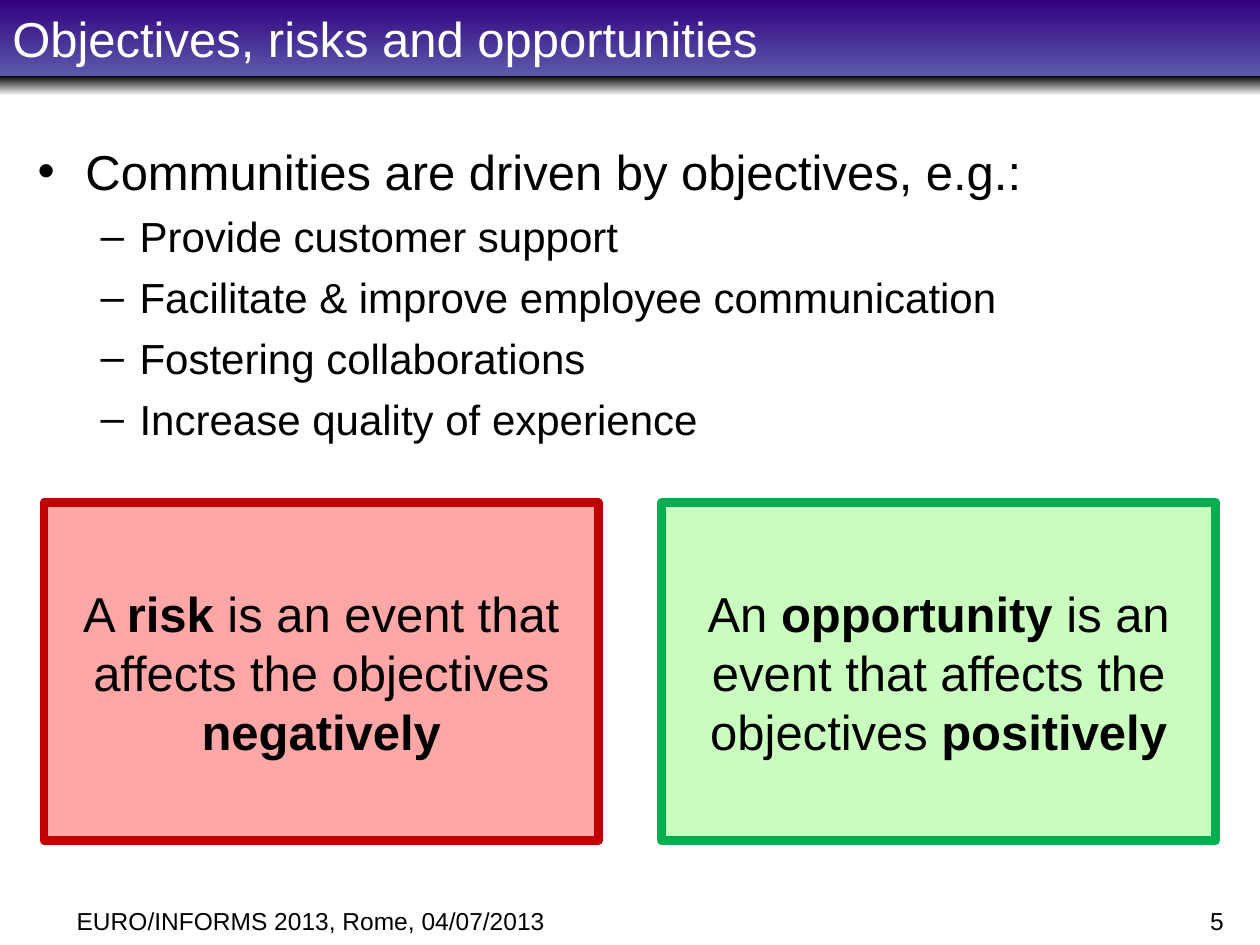
from lxml import etree
from pptx import Presentation
from pptx import util as u
from pptx.dml.color import RGBColor
from pptx.enum import shapes, text
from pptx.oxml.ns import qn

COLUMNS, ROWS = 100, 75
ALIGN, ANCHOR = text.PP_ALIGN, text.MSO_ANCHOR


def colour(value):
    return RGBColor.from_string(value)


class Deck:
    """Holds the style and the current slide; places are in grid columns and rows."""
    font, ink = "Arial", "000000"

    def __init__(self, width, height):
        self.show = Presentation()
        self.show.slide_width, self.show.slide_height = u.Inches(width), u.Inches(height)
        self.slide = self.show.slides.add_slide(self.show.slide_layouts[6])

    def place(self, left, top, width, height):
        column = self.show.slide_width / COLUMNS
        row = self.show.slide_height / ROWS
        return [round(n) for n in (left * column, top * row, width * column, height * row)]

    def rectangle(self, *place):
        box = self.slide.shapes.add_shape(shapes.MSO_SHAPE.RECTANGLE, *self.place(*place))
        box.shadow.inherit = False
        return box

    def add_runs(self, paragraph, runs, size, ink=None):
        """Fill a paragraph with (wording, bold) runs."""
        for wording, bold in runs:
            run = paragraph.add_run()
            run.text = wording
            run.font.name, run.font.size, run.font.bold = self.font, u.Pt(size), bold
            run.font.color.rgb = colour(ink or self.ink)

    def band(self, place, start, end):
        band = self.rectangle(*place)
        band.line.fill.background()
        band.fill.gradient()
        band.fill.gradient_angle = 270
        for stop, shade in zip(band.fill.gradient_stops, (start, end)):
            stop.color.rgb = colour(shade)

    def label(self, place, wording, size, ink=None, align=ALIGN.LEFT, anchor=ANCHOR.TOP):
        frame = self.slide.shapes.add_textbox(*self.place(*place)).text_frame
        frame.word_wrap, frame.vertical_anchor = True, anchor
        frame.paragraphs[0].alignment = align
        self.add_runs(frame.paragraphs[0], [(wording, False)], size, ink)

    def card(self, place, fill, edge, runs):
        card = self.rectangle(*place)
        card.fill.solid()
        card.fill.fore_color.rgb = colour(fill)
        card.line.color.rgb, card.line.width = colour(edge), u.Pt(5)
        frame = card.text_frame
        frame.word_wrap, frame.vertical_anchor = True, ANCHOR.MIDDLE
        frame.paragraphs[0].alignment = ALIGN.CENTER
        self.add_runs(frame.paragraphs[0], runs, 28)

    def outline(self, place, items):
        """Bulleted list of (level, wording) items."""
        levels = [("•", 0.38, 0.38, 28), ("–", 0.81, 0.31, 24)]
        frame = self.slide.shapes.add_textbox(*self.place(*place)).text_frame
        frame.word_wrap, frame.margin_top = True, u.Inches(0.08)
        for index, (level, wording) in enumerate(items):
            mark, indent, hanging, size = levels[level]
            item = frame.add_paragraph() if index else frame.paragraphs[0]
            item.level = level
            props = item._p.get_or_add_pPr()
            props.set("marL", str(u.Inches(indent)))
            props.set("indent", str(-u.Inches(hanging)))
            etree.SubElement(props, qn("a:buFont")).set("typeface", self.font)
            etree.SubElement(props, qn("a:buChar")).set("char", mark)
            if index:
                item.space_before = u.Pt(6)
            self.add_runs(item, [(wording, False)], size)


def main():
    deck = Deck(10, 7.5)

    # Header with its fading shadow
    deck.band((0, 0, 100, 6), "320080", "5A5AAA")
    deck.band((0, 6, 100, 1.6), "000000", "FFFFFF")
    deck.label((0, 0, 80.7, 6), "Objectives, risks and opportunities", 28, "FFFFFF",
               anchor=ANCHOR.MIDDLE)

    # Objectives
    deck.outline((2, 10.4, 96, 28.5), [
        (0, "Communities are driven by objectives, e.g.:"),
        (1, "Provide customer support"),
        (1, "Facilitate & improve employee communication"),
        (1, "Fostering collaborations"),
        (1, "Increase quality of experience"),
    ])

    # Definitions, mirrored about the middle of the slide
    margin, card_width = 3.5, 44
    definitions = [
        ("FFA7A7", "C00000", [("A ", False), ("risk ", True),
                              ("is an event that affects the objectives ", False),
                              ("negatively", True)]),
        ("CAFEBE", "00B050", [("An ", False), ("opportunity", True),
                              (" is an event that affects the objectives ", False),
                              ("positively", True)]),
    ]
    lefts = (margin, COLUMNS - margin - card_width)
    for left, (fill, edge, runs) in zip(lefts, definitions):
        deck.card((left, 39.9, card_width, 26.8), fill, edge, runs)

    # Footer
    deck.label((5.1, 71.4, 47.3, 3.6), "EURO/INFORMS 2013, Rome, 04/07/2013", 14)
    deck.label((90.2, 71.4, 7.9, 3.6), "5", 14, align=ALIGN.RIGHT)

    deck.show.save("out.pptx")


if __name__ == "__main__":
    main()
